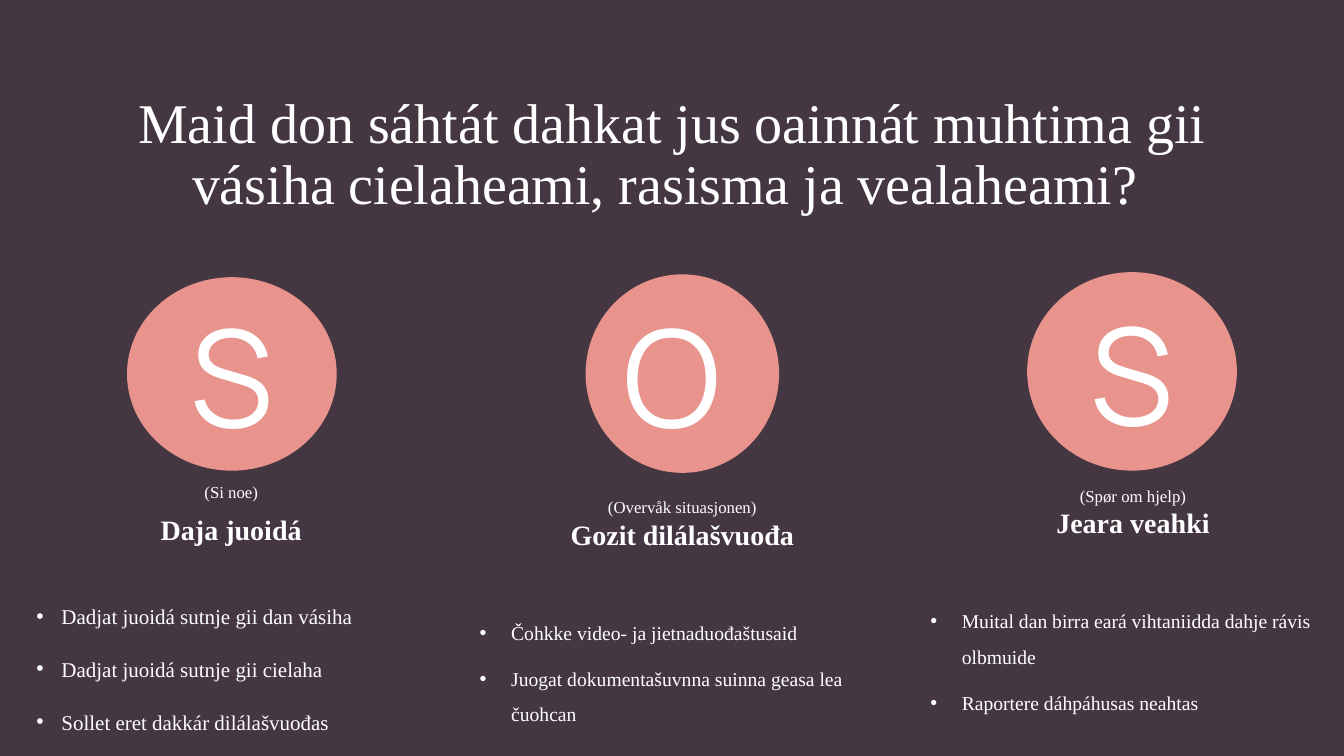
from lxml.etree import SubElement
from pptx import Presentation
from pptx.dml.color import RGBColor
from pptx.enum.shapes import MSO_SHAPE
from pptx.enum.text import MSO_ANCHOR, MSO_AUTO_SIZE, PP_ALIGN
from pptx.oxml.ns import qn
from pptx.util import Pt

PLUM = RGBColor(0x44, 0x37, 0x42)
CORAL = RGBColor(0xE8, 0x93, 0x8C)
WHITE = RGBColor(0xFF, 0xFF, 0xFF)
SERIF = "Times New Roman"
SANS = "Manrope"


def write(p, text, size, font=SERIF, bold=False, align=PP_ALIGN.CENTER,
          line=1.0, before=0, after=0, hang=0):
    """Fill a paragraph; a hang above zero makes it a bullet with that indent."""
    r = p.add_run()
    r.text = text
    r.font.size, r.font.name, r.font.bold = Pt(size), font, bold
    r.font.color.rgb = WHITE
    p.alignment = align
    p.line_spacing = line
    p.space_before, p.space_after = Pt(before), Pt(after)
    pPr = p._p.get_or_add_pPr()
    pPr.set("marL", str(Pt(hang)))
    pPr.set("indent", str(-Pt(hang)))
    if hang:
        SubElement(pPr, qn("a:buFont"), typeface="Arial")
        SubElement(pPr, qn("a:buChar"), char="•")
    else:
        SubElement(pPr, qn("a:buNone"))


class Deck:
    def __init__(self, prs):
        self.s = prs.slides.add_slide(prs.slide_layouts[1])
        self.s.background.fill.solid()
        self.s.background.fill.fore_color.rgb = PLUM

    def place(self, sp, box, anchor):
        sp.left, sp.top, sp.width, sp.height = map(Pt, box)
        tf = sp.text_frame
        tf.word_wrap = True
        tf.auto_size = MSO_AUTO_SIZE.NONE
        tf.vertical_anchor = anchor
        return tf

    def title(self, text, box):
        tf = self.place(self.s.shapes.title, box, MSO_ANCHOR.MIDDLE)
        write(tf.paragraphs[0], text, 40, line=0.9)

    def body(self):
        return self.s.placeholders[1]

    def textbox(self):
        return self.s.shapes.add_textbox(0, 0, 0, 0)

    def column(self, sp, box, note, heading, points, size, hang, gap,
               head_line=1.0, line=1.5, before=0, inset=3.6):
        """Write a note, a heading and, after a gap, a bullet list."""
        tf = self.place(sp, box, MSO_ANCHOR.TOP)
        tf.margin_top = Pt(inset)
        write(tf.paragraphs[0], note, 12, line=head_line, before=before)
        write(tf.add_paragraph(), heading, 20, bold=True, line=head_line, before=before)
        for i, point in enumerate(points):
            write(tf.add_paragraph(), point, size, align=PP_ALIGN.LEFT, line=line,
                  before=before if i else gap, after=8, hang=hang)

    def circle(self, letter, box, align=PP_ALIGN.CENTER):
        sp = self.s.shapes.add_shape(MSO_SHAPE.OVAL, 0, 0, 0, 0)
        sp.shadow.inherit = False
        sp.fill.solid()
        sp.fill.fore_color.rgb = CORAL
        sp.line.fill.background()
        tf = self.place(sp, box, MSO_ANCHOR.MIDDLE)
        write(tf.paragraphs[0], letter, 96, font=SANS, align=align)


def main():
    prs = Presentation()
    prs.slide_width, prs.slide_height = Pt(960), Pt(540)
    deck = Deck(prs)
    deck.title("Maid don sáhtát dahkat jus oainnát muhtima gii vásiha "
               "cielaheami, rasisma ja vealaheami? ", (66, 59, 828, 104.4))
    deck.column(deck.body(), (18.7, 342, 293, 213), "(Si noe)", "Daja juoidá",
                ["Dadjat juoidá sutnje gii dan vásiha",
                 "Dadjat juoidá sutnje gii cielaha",
                 "Sollet eret dakkár dilálašvuođas"],
                size=15, hang=18, gap=39, head_line=0.9, line=1.1, before=10)
    deck.column(deck.textbox(), (335.5, 351.4, 303.8, 171.4),
                "(Overvåk situasjonen)", "Gozit dilálašvuođa",
                ["Čohkke video- ja jietnaduođaštusaid",
                 "Juogat dokumentašuvnna suinna geasa lea čuohcan"],
                size=14, hang=22.5, gap=41.4)
    deck.column(deck.textbox(), (657.4, 322.6, 303.8, 252.7),
                "(Spør om hjelp)", "Jeara veahki",
                ["Muital dan birra eará vihtaniidda dahje rávis olbmuide",
                 "Raportere dáhpáhusas neahtas"],
                size=14, hang=22.5, gap=41.4, inset=24.3)
    deck.circle("S", (90.7, 198, 149.8, 138.2))
    deck.circle("O", (418.3, 196, 138.2, 141.8), PP_ALIGN.LEFT)
    deck.circle("S", (733.7, 194.4, 149.8, 141.8))
    prs.save("out.pptx")


if __name__ == "__main__":
    main()
